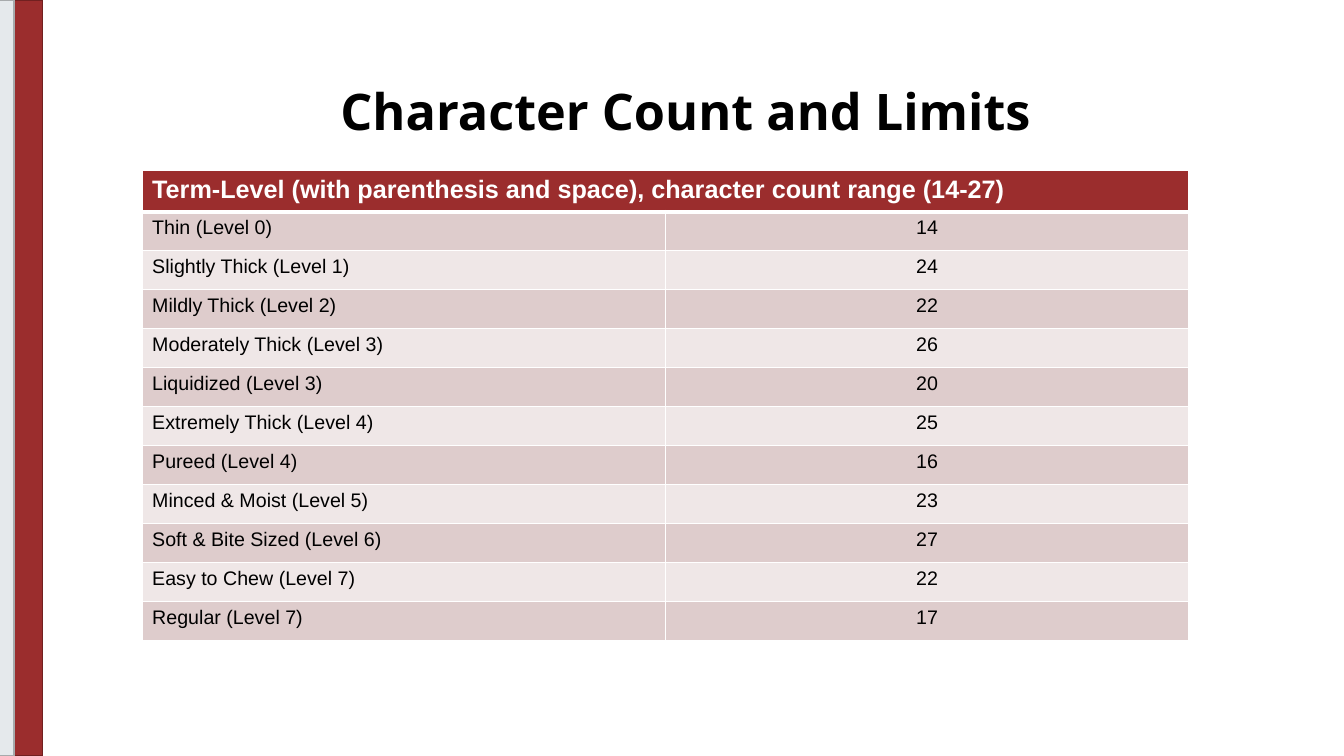
from lxml import etree
from pptx import Presentation
from pptx.dml.color import RGBColor
from pptx.enum.shapes import MSO_SHAPE
from pptx.enum.text import MSO_ANCHOR, PP_ALIGN
from pptx.oxml.ns import qn
from pptx.util import Inches, Pt

RECT = MSO_SHAPE.RECTANGLE
MIDDLE = MSO_ANCHOR.MIDDLE
LEFT, CENTER = PP_ALIGN.LEFT, PP_ALIGN.CENTER

RED = RGBColor(0x9B, 0x2D, 0x2D)
MAROON = RGBColor(0x71, 0x20, 0x20)
SILVER = RGBColor(0xE5, 0xE9, 0xEC)
GRAY = RGBColor(0xA7, 0xAA, 0xAC)
ROSE = RGBColor(0xDE, 0xCC, 0xCC)
BLUSH = RGBColor(0xEF, 0xE7, 0xE7)
BLACK = RGBColor(0, 0, 0)
WHITE = RGBColor(0xFF, 0xFF, 0xFF)

HEADING = "Term-Level (with parenthesis and space), character count range (14-27)"
COUNTS = [
    ("Thin (Level 0)", 14),
    ("Slightly Thick (Level 1)", 24),
    ("Mildly Thick (Level 2)", 22),
    ("Moderately Thick (Level 3)", 26),
    ("Liquidized (Level 3)", 20),
    ("Extremely Thick (Level 4)", 25),
    ("Pureed (Level 4)", 16),
    ("Minced & Moist (Level 5)", 23),
    ("Soft & Bite Sized (Level 6)", 27),
    ("Easy to Chew (Level 7)", 22),
    ("Regular (Level 7)", 17),
]


def write(frame, text, size=14, font="Arial", color=BLACK, bold=False, align=LEFT):
    """Fill a text frame with one formatted paragraph."""
    para = frame.paragraphs[0]
    para.alignment = align
    run = para.add_run()
    run.text = text
    run.font.size = Pt(size)
    run.font.name = font
    run.font.color.rgb = color
    run.font.bold = bold
    return para


class Deck:
    def __init__(self, slide):
        self.slide = slide
        self.shapes = slide.shapes

    def strip(self, left, width, fill, edge):
        bar = self.shapes.add_shape(RECT, Inches(left), 0, Inches(width), Inches(7.5))
        bar.shadow.inherit = False
        bar.fill.solid()
        bar.fill.fore_color.rgb = fill
        bar.line.color.rgb = edge
        bar.line.width = Pt(1)

    def title(self, text):
        box = self.shapes.title
        box.left, box.top = Inches(0.7), Inches(0.41)
        box.width, box.height = Inches(12.2), Inches(1.45)
        box.text_frame.vertical_anchor = MIDDLE
        para = write(box.text_frame, text, size=36, font="Open Sans",
                     bold=True, align=CENTER)
        para.line_spacing = 0.9

    def cell(self, cell, text, fill, top=1, bottom=1, **style):
        # Borders must come before the fill
        props = cell._tc.get_or_add_tcPr()
        for side, width in (("L", 1), ("R", 1), ("T", top), ("B", bottom)):
            line = etree.SubElement(props, qn(f"a:ln{side}"), w=str(Pt(width)))
            paint = etree.SubElement(line, qn("a:solidFill"))
            etree.SubElement(paint, qn("a:srgbClr"), val=str(WHITE))
        cell.fill.solid()
        cell.fill.fore_color.rgb = fill
        if text:
            write(cell.text_frame, text, **style)

    def table(self, heading, rows):
        head, body = Inches(0.41), Inches(4.26)
        grid = self.shapes.add_table(len(rows) + 1, 2, Inches(1.41), Inches(1.69),
                                     Inches(10.38), head + body).table
        for row in grid.rows:
            row.height = body // len(rows)
        grid.rows[0].height = head

        # Heading across both columns
        grid.cell(0, 0).merge(grid.cell(0, 1))
        for col, text in enumerate((heading, "")):
            self.cell(grid.cell(0, col), text, RED, bottom=3,
                      size=18, color=WHITE, bold=True)

        # Banded rows
        for num, (term, count) in enumerate(rows, 1):
            fill = ROSE if num % 2 else BLUSH
            top = 3 if num == 1 else 1
            self.cell(grid.cell(num, 0), term, fill, top=top)
            self.cell(grid.cell(num, 1), str(count), fill, top=top, align=CENTER)


def main():
    prs = Presentation()
    prs.slide_width, prs.slide_height = Inches(13.33), Inches(7.5)
    deck = Deck(prs.slides.add_slide(prs.slide_layouts[5]))

    # Side strips
    deck.strip(0, 0.42, RED, MAROON)
    deck.strip(-0.03, 0.17, SILVER, GRAY)

    # Content
    deck.title("Character Count and Limits")
    deck.table(HEADING, COUNTS)
    prs.save("out.pptx")


if __name__ == "__main__":
    main()
